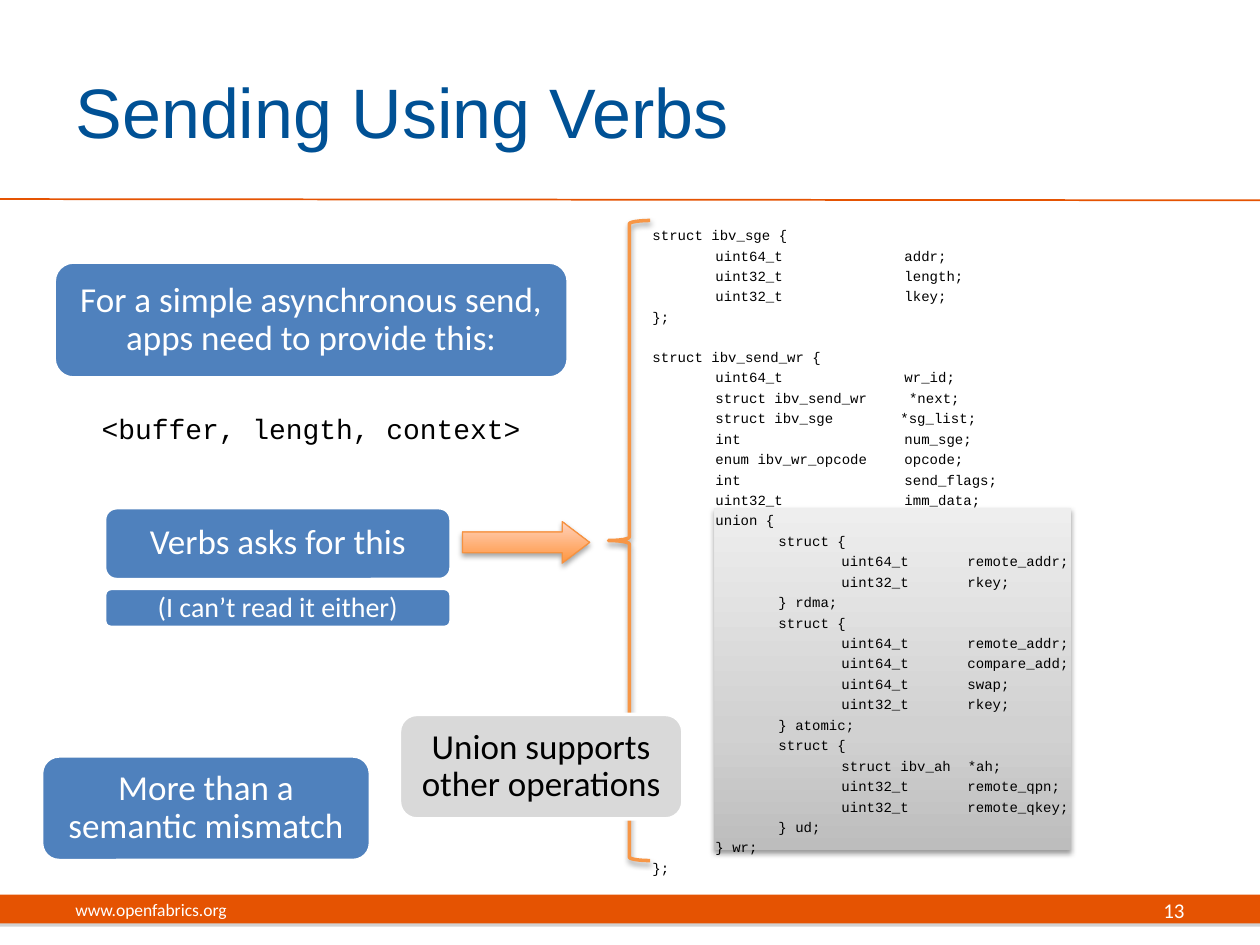
from dataclasses import dataclass

from lxml.etree import SubElement
from pptx import Presentation
from pptx.dml.color import RGBColor
from pptx.enum.shapes import MSO_CONNECTOR, MSO_SHAPE
from pptx.enum.text import MSO_ANCHOR, PP_ALIGN
from pptx.oxml.ns import qn
from pptx.util import Inches, Pt


@dataclass(frozen=True)
class Theme:
    title: str = "005195"
    band: str = "E55302"
    card: str = "4F81BD"
    note: str = "D9D9D9"
    brace: str = "F79646"
    arrow_line: str = "F69240"
    white: str = "FFFFFF"
    black: str = "000000"
    band_shadow: str = "808080"
    union_stops: tuple = ((0, "BDBDBD"), (35, "D1D1D1"), (100, "EEEEEE"))
    arrow_stops: tuple = ((0, "FF953E"), (100, "FFD2BD"))
    sans: str = "Calibri"
    heading: str = "Arial"
    mono: str = "Courier New"
    title_size: int = 40
    card_size: int = 20
    small_size: int = 16
    code_size: int = 8
    footer_size: int = 10
    number_size: int = 12


THEME = Theme()


def write(shape, text, font, size, color, align=PP_ALIGN.LEFT, anchor=MSO_ANCHOR.MIDDLE):
    frame = shape.text_frame
    frame.word_wrap = True
    frame.vertical_anchor = anchor
    frame.text = text
    for paragraph in frame.paragraphs:
        paragraph.alignment = align
        paragraph.font.name = font
        paragraph.font.size = Pt(size)
        paragraph.font.color.rgb = RGBColor.from_string(color)
    return frame


def add_shadow(shape, color, opacity, blur, distance):
    shape.shadow.inherit = False
    effects = shape.element.spPr.find(qn("a:effectLst"))
    shadow = SubElement(effects, qn("a:outerShdw"), blurRad=str(Pt(blur)),
                        dist=str(Pt(distance)), dir="5400000", rotWithShape="0")
    tint = SubElement(shadow, qn("a:srgbClr"), val=color)
    SubElement(tint, qn("a:alpha"), val=str(opacity * 1000))


prs = Presentation()
prs.slide_width, prs.slide_height = Inches(10), Inches(7.5)
slide = prs.slides.add_slide(prs.slide_layouts[5])
shapes = slide.shapes

title = shapes.title
title.left, title.top = Inches(0.5), Inches(0.25)
title.width, title.height = Inches(8.17), Inches(1.25)
write(title, "Sending Using Verbs", THEME.heading, THEME.title_size, THEME.title)

band = shapes.add_shape(MSO_SHAPE.RECTANGLE, Inches(0), Inches(7.1), Inches(10), Inches(0.23))
band.fill.solid()
band.fill.fore_color.rgb = RGBColor.from_string(THEME.band)
band.line.fill.background()
add_shadow(band, THEME.band_shadow, 35, 0, 1.8)

divider = shapes.add_connector(MSO_CONNECTOR.STRAIGHT, Inches(0), Inches(1.58), Inches(10), Inches(1.59))
divider.line.color.rgb = RGBColor.from_string(THEME.band)
divider.line.width = Pt(1)
SubElement(divider.element.spPr, qn("a:effectLst"))

union_panel = shapes.add_shape(MSO_SHAPE.RECTANGLE, Inches(5.67), Inches(4.03), Inches(2.83), Inches(2.72))
union_panel.line.fill.background()
arrow = shapes.add_shape(MSO_SHAPE.RIGHT_ARROW, Inches(3.67), Inches(4.14), Inches(1.01), Inches(0.33))
arrow.adjustments[1] = 0.66
arrow.line.color.rgb = RGBColor.from_string(THEME.arrow_line)
arrow.line.width = Pt(0.75)
for shape, stops, opacity, distance in (
    (union_panel, THEME.union_stops, 38, 1.6),
    (arrow, THEME.arrow_stops, 35, 1.8),
):
    shape.fill.gradient()
    shape.fill.gradient_angle = 90
    stop_list = shape.element.spPr.find(qn("a:gradFill")).find(qn("a:gsLst"))
    stop_list.clear()
    for position, color in stops:
        stop = SubElement(stop_list, qn("a:gs"), pos=str(position * 1000))
        SubElement(stop, qn("a:srgbClr"), val=color)
    add_shadow(shape, THEME.black, opacity, 3.1, distance)

CODE = """struct ibv_sge {
\tuint64_t\t\taddr;
\tuint32_t\t\tlength;
\tuint32_t\t\tlkey;
};
struct ibv_send_wr {
\tuint64_t\t\twr_id;
\tstruct ibv_send_wr     *next;
\tstruct ibv_sge\t       *sg_list;
\tint\t\t\tnum_sge;
\tenum ibv_wr_opcode\topcode;
\tint\t\t\tsend_flags;
\tuint32_t\t\timm_data;
\tunion {
\t\tstruct {
\t\t\tuint64_t\tremote_addr;
\t\t\tuint32_t\trkey;
\t\t} rdma;
\t\tstruct {
\t\t\tuint64_t\tremote_addr;
\t\t\tuint64_t\tcompare_add;
\t\t\tuint64_t\tswap;
\t\t\tuint32_t\trkey;
\t\t} atomic;
\t\tstruct {
\t\t\tstruct ibv_ah  *ah;
\t\t\tuint32_t\tremote_qpn;
\t\t\tuint32_t\tremote_qkey;
\t\t} ud;
\t} wr;
};"""
listing = shapes.add_textbox(Inches(5.08), Inches(1.75), Inches(4.42), Inches(5.27))
listing.text_frame.text = CODE
for index, line in enumerate(listing.text_frame.paragraphs):
    if index:
        line.space_before = Pt(13.3 if line.text.startswith("struct") else 2.1)
    tabs = SubElement(line._p.get_or_add_pPr(), qn("a:tabLst"))
    for step in range(1, 7):
        SubElement(tabs, qn("a:tab"), pos=str(Inches(0.5 * step)), algn="l")
    line.font.name = THEME.mono
    line.font.size = Pt(THEME.code_size)
    line.font.color.rgb = RGBColor.from_string(THEME.black)

brace = shapes.add_shape(MSO_SHAPE.LEFT_BRACE, Inches(4.83), Inches(1.75), Inches(0.33), Inches(5.08))
brace.fill.background()
brace.line.color.rgb = RGBColor.from_string(THEME.brace)
brace.line.width = Pt(2)
add_shadow(brace, THEME.black, 38, 3.1, 1.6)

for text, left, top, width, height, fill, color, size in (
    ("For a simple asynchronous send, apps need to provide this:",
     0.43, 2.08, 4.08, 0.92, THEME.card, THEME.white, THEME.card_size),
    ("Verbs asks for this", 0.83, 4.03, 2.75, 0.57, THEME.card, THEME.white, THEME.card_size),
    ("(I can’t read it either)", 0.83, 4.67, 2.75, 0.31, THEME.card, THEME.white, THEME.small_size),
    ("Union supports other operations", 3.17, 5.67, 2.25, 0.83, THEME.note, THEME.black, THEME.card_size),
    ("More than a semantic mismatch", 0.33, 6, 2.61, 0.83, THEME.card, THEME.white, THEME.card_size),
):
    card = shapes.add_shape(MSO_SHAPE.ROUNDED_RECTANGLE, Inches(left), Inches(top), Inches(width), Inches(height))
    card.shadow.inherit = False
    card.fill.solid()
    card.fill.fore_color.rgb = RGBColor.from_string(fill)
    card.line.color.rgb = RGBColor.from_string(THEME.white)
    card.line.width = Pt(2)
    frame = write(card, text, THEME.sans, size, color, PP_ALIGN.CENTER)
    frame.margin_left = frame.margin_right = Inches(0.08)
    frame.margin_top = frame.margin_bottom = Inches(0.02)
    frame.paragraphs[0].line_spacing = 0.9

arguments = shapes.add_textbox(Inches(0.26), Inches(3.22), Inches(4.42), Inches(0.47))
write(arguments, "<buffer, length, context>", THEME.mono, THEME.small_size, THEME.black,
      PP_ALIGN.CENTER, MSO_ANCHOR.TOP)

site = shapes.add_textbox(Inches(0.5), Inches(7.02), Inches(3.17), Inches(0.4))
write(site, "www.openfabrics.org", THEME.sans, THEME.footer_size, THEME.white)
page_number = shapes.add_textbox(Inches(7.17), Inches(7.02), Inches(2.33), Inches(0.4))
write(page_number, "13", THEME.sans, THEME.number_size, THEME.white, PP_ALIGN.RIGHT)

prs.save("out.pptx")
